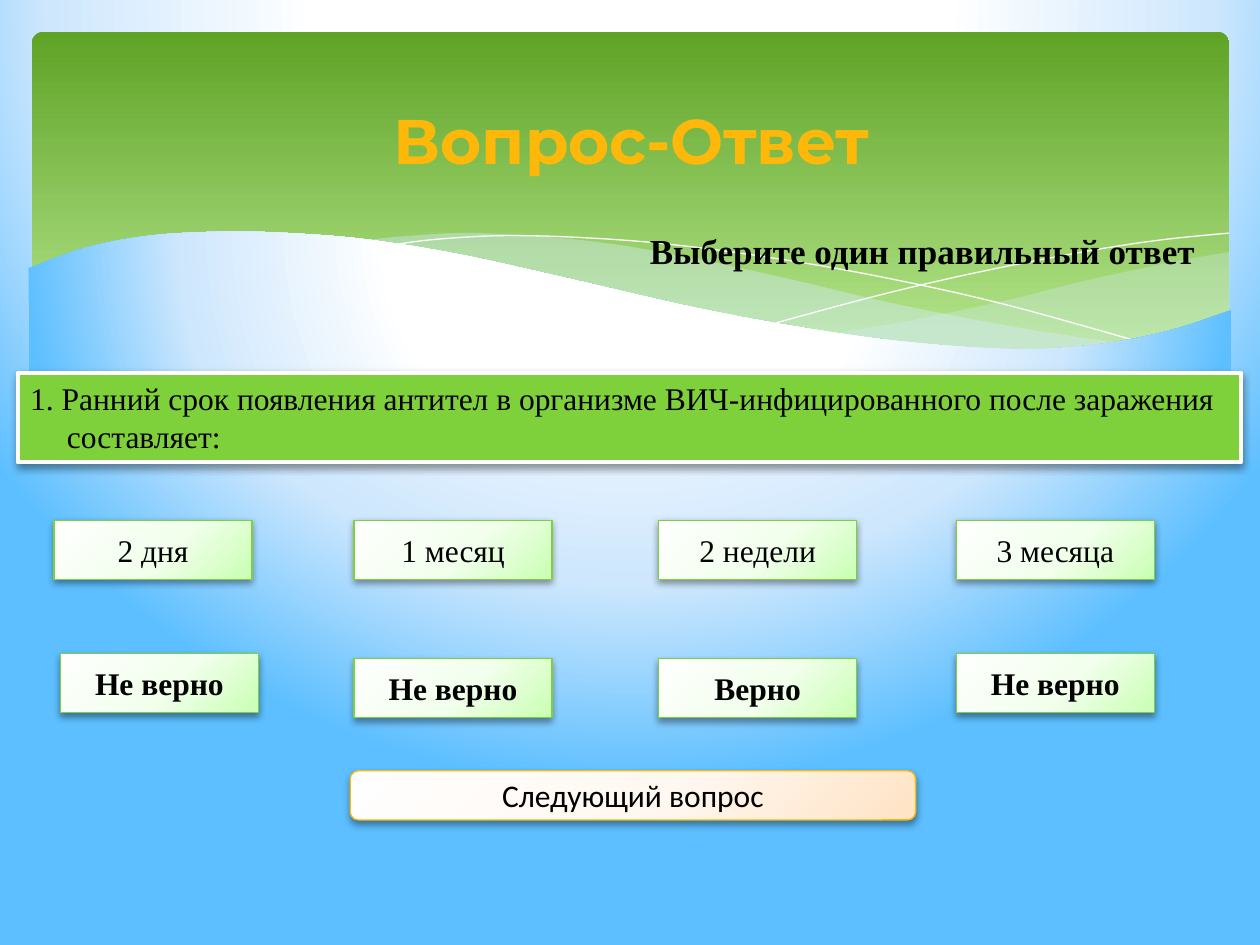
from dataclasses import dataclass

from lxml import etree
from pptx import Presentation
from pptx import util as u
from pptx.dml.color import RGBColor
from pptx.enum import shapes, text
from pptx.oxml.ns import qn


@dataclass(frozen=True)
class Theme:
    black: str = "000000"
    white: str = "FFFFFF"
    green: str = "7FD13B"
    amber: str = "FEB80A"
    mist: str = "D6ECFF"
    sky: tuple = ((40, "FFFFFF"), (74, "CEE7FD"), (100, "5DBFFF"))
    banner: tuple = ((0, "5FA326"), (90, "B2E389"))
    mint: tuple = ((0, "FEFFFE"), (55, "F2FFED"), (100, "CAFFB4"))
    peach: tuple = ((0, "FFFEFE"), (55, "FFF8F1"), (100, "FFE3C4"))
    serif: str = "Times New Roman"
    title_size: int = 36
    subtitle_size: int = 20
    body_size: int = 18


theme = Theme()
SKY_FOCUS = (20, -40, 20, 140)
CARD_FOCUS = (-40, -90, 140, 190)


def paint_gradient(fill, element, stops, focus=None):
    """Fill with stops, round the focus rectangle (l, t, r, b in %) or top to bottom."""
    fill.gradient()
    gradient = next(element.iter(qn("a:gradFill")))
    for child in list(gradient):
        gradient.remove(child)
    stop_list = etree.SubElement(gradient, qn("a:gsLst"))
    for position, color in stops:
        stop = etree.SubElement(stop_list, qn("a:gs"), pos=str(position * 1000))
        etree.SubElement(stop, qn("a:srgbClr"), val=color)
    if focus:
        circle = etree.SubElement(gradient, qn("a:path"), path="circle")
        sides = {side: str(value * 1000) for side, value in zip("ltrb", focus)}
        etree.SubElement(circle, qn("a:fillToRect"), **sides)
    else:
        etree.SubElement(gradient, qn("a:lin"), ang="5400000", scaled="0")


def write_text(shape, content, size=theme.body_size, font=theme.serif, color=theme.black,
               bold=False, align=text.PP_ALIGN.CENTER, anchor=text.MSO_ANCHOR.MIDDLE, hanging=0):
    frame = shape.text_frame
    frame.word_wrap = True
    frame.vertical_anchor = anchor
    paragraph = frame.paragraphs[0]
    paragraph.alignment = align
    if hanging:
        properties = paragraph._p.get_or_add_pPr()
        properties.set("marL", str(u.Cm(hanging)))
        properties.set("indent", str(-u.Cm(hanging)))
    run = paragraph.add_run()
    run.text = content
    run.font.size = u.Pt(size)
    run.font.name = font
    run.font.bold = bold
    run.font.color.rgb = RGBColor.from_string(color)


presentation = Presentation()
presentation.slide_width, presentation.slide_height = u.Cm(25.4), u.Cm(19.05)
slide = presentation.slides.add_slide(presentation.slide_layouts[6])
paint_gradient(slide.background.fill, slide.element, theme.sky, SKY_FOCUS)

banner = slide.shapes.add_shape(
    shapes.MSO_SHAPE.ROUNDED_RECTANGLE, u.Cm(0.64), u.Cm(0.64), u.Cm(24.14), u.Cm(6.86))
banner.adjustments[0] = 0.034
banner.shadow.inherit = False
banner.line.fill.background()
paint_gradient(banner.fill, banner.element, theme.banner)

# Waves: (kind, opacity in %, edges); each edge is a smooth curve through its points, in cm.
waves = [
    ("veil", 29, [
        [(24.79, 5.08), (23.75, 5.26), (21.87, 5.66), (20.45, 6.02), (18.52, 6.43), (16.79, 6.73)],
        [(16.79, 6.73), (18.59, 6.96), (20.4, 7.06), (21.92, 6.99), (23.39, 6.73), (24.79, 6.27)],
    ]),
    ("veil", 40, [
        [(22.68, 6.93), (20.5, 6.6), (17.93, 6.1), (15.98, 5.64), (13.74, 5.16),
         (11.81, 4.85), (9.65, 4.7), (8.33, 4.75), (7.26, 4.85)],
        [(7.26, 4.85), (9.19, 5.16), (11.4, 5.64), (13.46, 6.1), (15.7, 6.55),
         (17.65, 6.86), (19.33, 7.04), (21.03, 7.06), (22.68, 6.93)],
    ]),
    ("line", 100, [
        [(7.85, 4.95), (8.74, 4.83), (10.19, 4.75), (11.91, 4.8), (13.54, 4.93),
         (15.44, 5.18), (17.65, 5.56), (20.19, 6.12), (23.04, 6.91)],
    ]),
    ("line", 100, [
        [(15.57, 6.53), (17.65, 5.97), (19.71, 5.49), (22, 5.05), (23.47, 4.83), (24.77, 4.7)],
    ]),
    ("sky", 100, [
        [(24.82, 6.25), (23.62, 6.65), (22.23, 6.93), (20.55, 7.04), (18.44, 6.91),
         (16.46, 6.65), (14.1, 6.22), (11.35, 5.59), (9.27, 5.13), (7.42, 4.83),
         (5.84, 4.7), (4.5, 4.67), (3.02, 4.75), (1.7, 5), (0.58, 5.41)],
        [(0.58, 8.36), (24.82, 8.36)],
    ]),
]
STEPS = 6
for kind, opacity, edges in waves:
    outline = []
    for edge in edges:
        padded = [edge[0], *edge, edge[-1]]
        outline.append(edge[0])
        # Catmull-Rom interpolation between neighbouring points
        for before, start, end, after in zip(padded, padded[1:], padded[2:], padded[3:]):
            for step in range(1, STEPS + 1):
                t = step / STEPS
                outline.append(tuple(
                    b + ((c - a) * t + (2 * a - 5 * b + 4 * c - d) * t**2
                         + (3 * b - a - 3 * c + d) * t**3) / 2
                    for a, b, c, d in zip(before, start, end, after)))
    points = [(u.Cm(x), u.Cm(y)) for x, y in outline]
    builder = slide.shapes.build_freeform(*points[0])
    builder.add_line_segments(points[1:], close=kind != "line")
    wave = builder.convert_to_shape()
    wave.shadow.inherit = False
    if kind == "line":
        wave.fill.background()
        wave.line.color.rgb = RGBColor.from_string(theme.white)
        wave.line.width = u.Pt(0)
        continue
    wave.line.fill.background()
    if kind == "sky":
        paint_gradient(wave.fill, wave.element, theme.sky, SKY_FOCUS)
    else:
        wave.fill.solid()
        wave.fill.fore_color.rgb = RGBColor.from_string(theme.mist)
        color = next(wave.element.iter(qn("a:srgbClr")))
        etree.SubElement(color, qn("a:alpha"), val=str(opacity * 1000))

title = slide.shapes.add_textbox(u.Cm(1.3), u.Cm(1.52), u.Cm(22.86), u.Cm(2.59))
write_text(title, "Вопрос-Ответ", size=theme.title_size, font="Montserrat",
           color=theme.amber, bold=True)
subtitle = slide.shapes.add_textbox(u.Cm(12.85), u.Cm(4.5), u.Cm(11.81), u.Cm(1.12))
write_text(subtitle, "Выберите один правильный ответ", size=theme.subtitle_size, bold=True,
           align=text.PP_ALIGN.LEFT, anchor=text.MSO_ANCHOR.TOP)

# Panels: (box in cm, preset, fill stops, line colour, line width, text, text format)
RECTANGLE = shapes.MSO_SHAPE.RECTANGLE
panels = [
    ((0.36, 7.52, 24.66, 1.8), RECTANGLE, None, theme.white, 2.5,
     "1. Ранний срок появления антител в организме ВИЧ-инфицированного после заражения составляет:",
     dict(align=text.PP_ALIGN.LEFT, anchor=text.MSO_ANCHOR.TOP, hanging=0.74)),
]
answers = [
    ("2 дня", 1.09, "Не верно", 1.22, 13.18),
    ("1 месяц", 7.14, "Не верно", 7.14, 13.28),
    ("2 недели", 13.28, "Верно", 13.28, 13.28),
    ("3 месяца", 19.28, "Не верно", 19.28, 13.18),
]
for answer, answer_left, verdict, verdict_left, verdict_top in answers:
    for content, left, top, bold in ((answer, answer_left, 10.49, False),
                                     (verdict, verdict_left, verdict_top, True)):
        panels.append(((left, top, 3.99, 1.19), RECTANGLE, theme.mint, theme.green, 0.75,
                       content, dict(bold=bold)))
panels.append(((7.06, 15.54, 11.4, 0.99), shapes.MSO_SHAPE.ROUNDED_RECTANGLE, theme.peach,
               theme.amber, 0.75, "Следующий вопрос", dict(font="Calibri")))

for box, preset, stops, line_color, line_width, content, text_format in panels:
    panel = slide.shapes.add_shape(preset, *map(u.Cm, box))
    if stops:
        paint_gradient(panel.fill, panel.element, stops, CARD_FOCUS)
    else:
        panel.fill.solid()
        panel.fill.fore_color.rgb = RGBColor.from_string(theme.green)
    panel.line.color.rgb = RGBColor.from_string(line_color)
    panel.line.width = u.Pt(line_width)
    panel.shadow.inherit = False
    effects = next(panel.element.iter(qn("a:effectLst")))
    shadow = etree.SubElement(effects, qn("a:outerShdw"), blurRad=str(u.Pt(4.1)),
                              dist=str(u.Pt(2)), dir="5400000", rotWithShape="0")
    shadow_color = etree.SubElement(shadow, qn("a:srgbClr"), val=theme.black)
    etree.SubElement(shadow_color, qn("a:alpha"), val="40000")
    write_text(panel, content, **text_format)

presentation.save("out.pptx")
